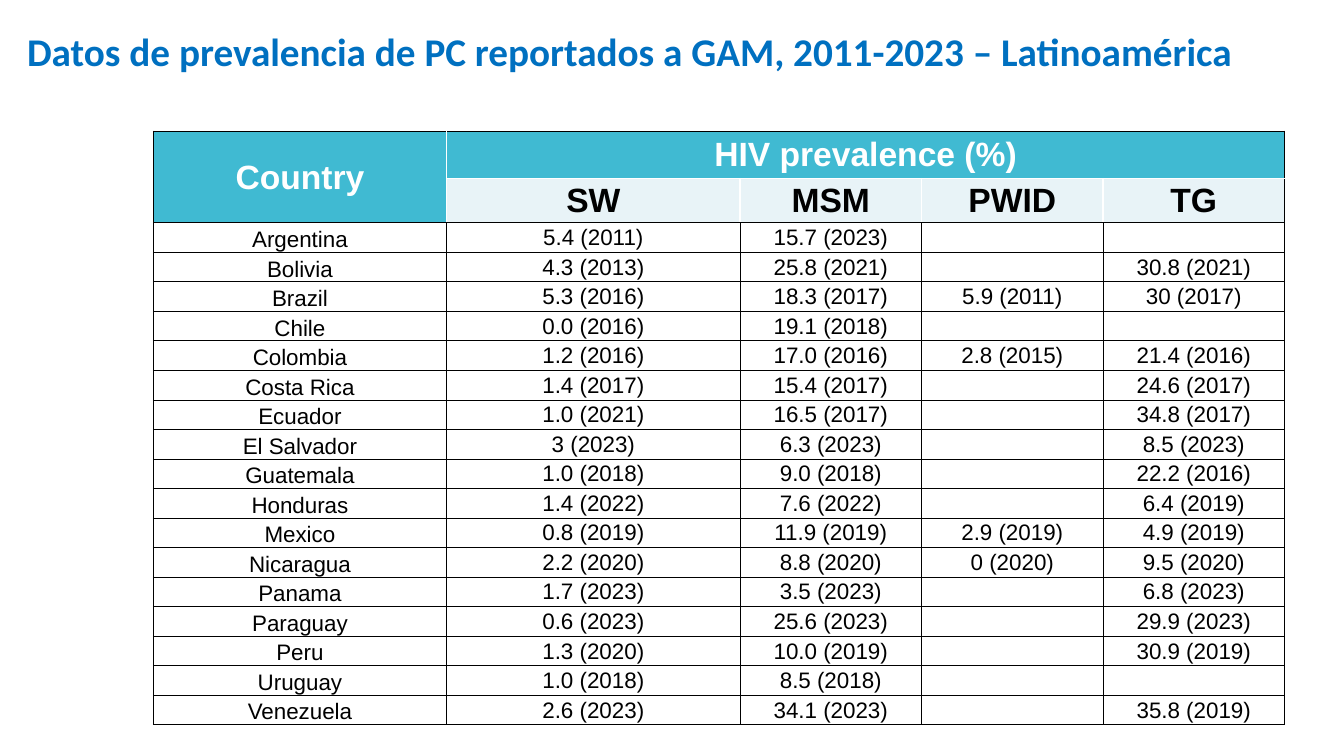
import pptx
import pptx.util
import pptx.dml.color
import pptx.enum.text
import pptx.oxml.ns
from lxml import etree

Inches = pptx.util.Inches
ALIGN = pptx.enum.text.PP_ALIGN
ANCHOR = pptx.enum.text.MSO_ANCHOR
COLORS = {"title": "0070C0", "header": "40BAD2", "subheader": "E8F3F7",
          "white": "FFFFFF", "black": "000000"}

TITLE = "Datos de prevalencia de PC reportados a GAM, 2011-2023 – Latinoamérica"
TITLE_FONT = {"name": "Calibri", "size": pptx.util.Pt(28), "bold": True}
HEADER_FONT = {"name": "Arial", "size": pptx.util.Pt(24), "bold": True}
BODY_FONT = {"name": "Arial", "size": pptx.util.Pt(16), "bold": False}
CELL_FORMAT = {"margin_left": Inches(0.01), "margin_top": Inches(0.01),
               "margin_right": Inches(0.01), "margin_bottom": 0}

COLUMN_WIDTHS = [2.91, 2.91, 1.8, 1.8, 1.8]
HEADER_HEIGHTS = [0.47, 0.44]
HEADERS = [["Country", "HIV prevalence (%)", "", "", ""],
           ["", "SW", "MSM", "PWID", "TG"]]
PREVALENCE = [
    ["Argentina", "5.4 (2011)", "15.7 (2023)", "", ""],
    ["Bolivia", "4.3 (2013)", "25.8 (2021)", "", "30.8 (2021)"],
    ["Brazil", "5.3 (2016)", "18.3 (2017)", "5.9 (2011)", "30 (2017)"],
    ["Chile", "0.0 (2016)", "19.1 (2018)", "", ""],
    ["Colombia", "1.2 (2016)", "17.0 (2016)", "2.8 (2015)", "21.4 (2016)"],
    ["Costa Rica", "1.4 (2017)", "15.4 (2017)", "", "24.6 (2017)"],
    ["Ecuador", "1.0 (2021)", "16.5 (2017)", "", "34.8 (2017)"],
    ["El Salvador", "3 (2023)", "6.3 (2023)", "", "8.5 (2023)"],
    ["Guatemala", "1.0 (2018)", "9.0 (2018)", "", "22.2 (2016)"],
    ["Honduras", "1.4 (2022)", "7.6 (2022)", "", "6.4 (2019)"],
    ["Mexico", "0.8 (2019)", "11.9 (2019)", "2.9 (2019)", "4.9 (2019)"],
    ["Nicaragua", "2.2 (2020)", "8.8 (2020)", "0 (2020)", "9.5 (2020)"],
    ["Panama", "1.7 (2023)", "3.5 (2023)", "", "6.8 (2023)"],
    ["Paraguay", "0.6 (2023)", "25.6 (2023)", "", "29.9 (2023)"],
    ["Peru", "1.3 (2020)", "10.0 (2019)", "", "30.9 (2019)"],
    ["Uruguay", "1.0 (2018)", "8.5 (2018)", "", ""],
    ["Venezuela", "2.6 (2023)", "34.1 (2023)", "", "35.8 (2019)"],
]


def rgb(name):
    return pptx.dml.color.RGBColor.from_string(COLORS[name])


def set_format(target, values):
    for name, value in values.items():
        setattr(target, name, value)


def add_text(para, text, font, color):
    span = para.add_run()
    span.text = text
    set_format(span.font, font)
    span.font.color.rgb = rgb(color)


def add_child(parent, tag, **attributes):
    return etree.SubElement(parent, pptx.oxml.ns.qn(tag), attributes)


def add_borders(cell, row, column):
    """Black lines, with white ones between the header cells."""
    last_row = row + cell.span_height - 1
    last_column = column + cell.span_width - 1
    header = row < len(HEADERS)
    inner = {"a:lnL": column > 0,
             "a:lnR": last_column < len(COLUMN_WIDTHS) - 1,
             "a:lnT": row > 0,
             "a:lnB": last_row < len(HEADERS) - 1}
    properties = cell._tc.get_or_add_tcPr()
    for tag, is_inner in inner.items():
        white = header and is_inner
        width = pptx.util.Pt(1 if white else 0.5)
        line = add_child(properties, tag, w=str(width))
        fill = add_child(line, "a:solidFill")
        add_child(fill, "a:srgbClr", val=COLORS["white" if white else "black"])


def fill_cell(cell, row, column, text):
    header = row < len(HEADERS)
    top_level = row == 0 or (header and column == 0)
    font = HEADER_FONT if header else BODY_FONT
    add_borders(cell, row, column)
    cell.fill.solid()
    cell.fill.fore_color.rgb = rgb(
        "header" if top_level else "subheader" if header else "white")
    set_format(cell, CELL_FORMAT)
    country = column == 0 and not header
    cell.vertical_anchor = ANCHOR.BOTTOM if country else ANCHOR.MIDDLE
    para = cell.text_frame.paragraphs[0]
    para.alignment = ALIGN.CENTER
    if text:
        add_text(para, text, font, "white" if top_level else "black")
    else:
        # Keeps the row low when the cell is empty
        add_child(para._p, "a:endParaRPr", sz=str(int(font["size"].pt * 100)))


def add_title(page, left, top, width, height):
    box = page.shapes.add_textbox(*map(Inches, (left, top, width, height)))
    box.text_frame.word_wrap = True
    add_text(box.text_frame.paragraphs[0], TITLE, TITLE_FONT, "title")


def add_prevalence_table(page, left, top, width, height):
    rows = HEADERS + PREVALENCE
    frame = page.shapes.add_table(len(rows), len(COLUMN_WIDTHS),
                                  *map(Inches, (left, top, width, height)))
    table = frame.table
    set_format(table, {"first_row": False, "horz_banding": False})

    # Grid: the body rows share what the header rows leave
    body_height = (height - sum(HEADER_HEIGHTS)) / len(PREVALENCE)
    heights = HEADER_HEIGHTS + [body_height] * len(PREVALENCE)
    for column, column_width in zip(table.columns, COLUMN_WIDTHS):
        column.width = Inches(column_width)
    for row, row_height in zip(table.rows, heights):
        row.height = Inches(row_height)
    table.cell(0, 0).merge(table.cell(1, 0))
    table.cell(0, 1).merge(table.cell(0, 4))

    # Cells
    for row, values in enumerate(rows):
        for column, text in enumerate(values):
            fill_cell(table.cell(row, column), row, column, text)


def main():
    deck = pptx.Presentation()
    deck.slide_width, deck.slide_height = Inches(13.33), Inches(7.5)
    page = deck.slides.add_slide(deck.slide_layouts[6])
    add_title(page, 0.17, 0.22, 12.73, 0.57)
    add_prevalence_table(page, 1.52, 1.3, 11.22, 5.89)
    deck.save("out.pptx")


if __name__ == "__main__":
    main()
